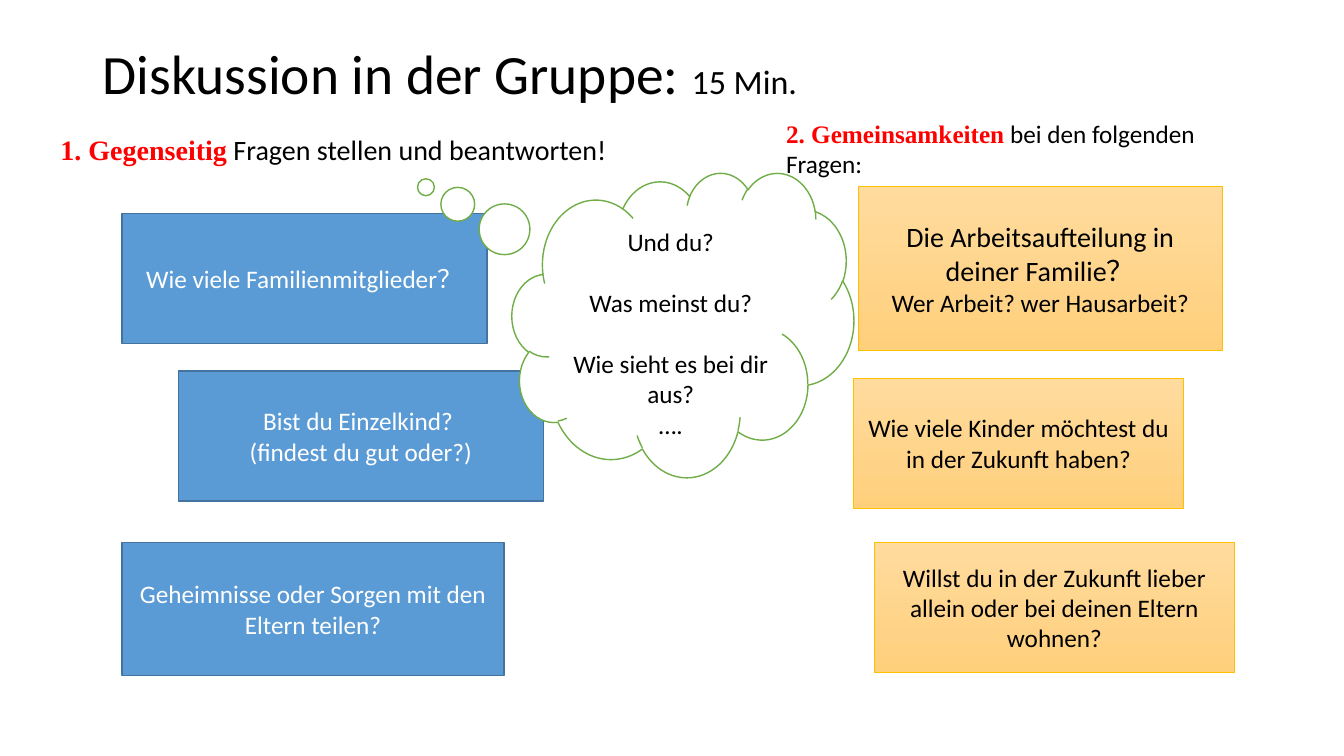
import pptx
import pptx.util
import pptx.dml.color
import pptx.enum.shapes
import pptx.enum.text

COLORS = {
    "black": "000000", "white": "FFFFFF", "red": "FF0000",
    "blue": "5B9BD5", "blue_line": "43739E", "green": "70AD47",
    "sand_top": "FFDB9E", "sand_bottom": "FFD07C", "gold": "FFC000",
}
SHAPES = pptx.enum.shapes.MSO_SHAPE
ALIGN = pptx.enum.text.PP_ALIGN
ANCHOR = pptx.enum.text.MSO_ANCHOR
AUTO_SIZE = pptx.enum.text.MSO_AUTO_SIZE


def rgb(name):
    """Return the named colour."""
    return pptx.dml.color.RGBColor.from_string(COLORS[name])


def inside(box, shares):
    """Return the part of a box given by percentages of its size."""
    left, top, width, height = box
    x, y, w, h = (share / 100 for share in shares)
    return (round(left + x * width), round(top + y * height),
            round(w * width), round(h * height))


def add_text(p, text, size=18, color="black", font="Calibri", bold=False):
    """Add a formatted run to a paragraph."""
    r = p.add_run()
    r.text = text
    r.font.name = font
    r.font.size = pptx.util.Pt(size)
    r.font.bold = bold
    r.font.color.rgb = rgb(color)


def add_lines(sp, lines, color="black", gaps=()):
    """Centre lines of text and their sizes in a shape, with gaps before some."""
    tf = sp.text_frame
    tf.word_wrap = True
    tf.vertical_anchor = ANCHOR.MIDDLE
    for i, (text, size) in enumerate(lines):
        p = tf.paragraphs[0] if i == 0 else tf.add_paragraph()
        p.alignment = ALIGN.CENTER
        if i in gaps:
            p.space_before = pptx.util.Pt(22)
        add_text(p, text, size, color)


def add_outlined(s, kind, box, line, width):
    """Add a shape with an outline and no shadow."""
    sp = s.shapes.add_shape(kind, *box)
    sp.shadow.inherit = False
    sp.line.color.rgb = rgb(line)
    sp.line.width = pptx.util.Pt(width)
    return sp


def fill_blue(sp):
    """Fill a shape with plain blue."""
    sp.fill.solid()
    sp.fill.fore_color.rgb = rgb("blue")


def fill_sand(sp):
    """Fill a shape with a gradient running downwards."""
    sp.fill.gradient()
    sp.fill.gradient_angle = 270
    for stop, name in zip(sp.fill.gradient_stops, ("sand_top", "sand_bottom")):
        stop.color.rgb = rgb(name)


def add_title(s, box):
    """Place the title and its time limit."""
    sp = s.shapes.title
    sp.left, sp.top, sp.width, sp.height = box
    tf = sp.text_frame
    tf.auto_size = AUTO_SIZE.NONE
    tf.vertical_anchor = ANCHOR.MIDDLE
    p = tf.paragraphs[0]
    p.alignment = ALIGN.LEFT
    p.line_spacing = 0.9
    add_text(p, "Diskussion in der Gruppe: ", 39.6)
    add_text(p, "15 Min.", 24.3)


def add_heading(s, box, keyword, rest, size):
    """Add a task heading with a red keyword."""
    tf = s.shapes.add_textbox(*box).text_frame
    tf.word_wrap = True
    tf.auto_size = AUTO_SIZE.SHAPE_TO_FIT_TEXT
    p = tf.paragraphs[0]
    add_text(p, keyword, size, "red", "Times New Roman", True)
    add_text(p, rest, size)


def add_questions(s, box, questions, fill, line, width, color):
    """Add a column of question cards."""
    for shares, lines in questions:
        sp = add_outlined(s, SHAPES.RECTANGLE, inside(box, shares), line, width)
        fill(sp)
        add_lines(sp, lines, color)


def add_cloud(s, box):
    """Add the thought cloud with follow-up questions."""
    sp = add_outlined(s, SHAPES.CLOUD_CALLOUT, box, "green", 1)
    sp.adjustments[0] = -0.752
    sp.adjustments[1] = -0.451
    sp.fill.solid()
    sp.fill.fore_color.rgb = rgb("white")
    sp.text_frame.margin_top = pptx.util.Inches(0.35)
    texts = ("Und du?", "Was meinst du?", "Wie sieht es bei dir aus?", "….")
    add_lines(sp, [(text, 18) for text in texts], gaps=(1, 2))


def main():
    """Build and save the slide."""
    prs = pptx.Presentation()
    prs.slide_width = pptx.util.Inches(13.33)
    prs.slide_height = pptx.util.Inches(7.5)
    s = prs.slides.add_slide(prs.slide_layouts[5])
    page = (0, 0, prs.slide_width, prs.slide_height)
    family = [
        ((0, 0, 86.6, 28.17), [("Wie viele Familienmitglieder？", 18)]),
        ((13.4, 34.06, 86.6, 28.17),
         [("Bist du Einzelkind? ", 18), ("(findest du gut oder?)", 18)]),
        ((0, 71.18, 90.67, 28.82),
         [("Geheimnisse oder Sorgen mit den Eltern teilen?", 18)]),
    ]
    future = [
        ((1.06, 0, 95.77, 33.82),
         [("Die Arbeitsaufteilung in deiner Familie？", 20),
          ("Wer Arbeit? wer Hausarbeit?", 18)]),
        ((0, 39.42, 86.51, 26.76),
         [("Wie viele Kinder möchtest du in der Zukunft haben?", 18)]),
        ((5.29, 73.24, 94.71, 26.76),
         [("Willst du in der Zukunft lieber allein oder bei deinen Eltern wohnen?", 18)]),
    ]
    add_title(s, inside(page, (6.9, 5.33, 86.25, 9.6)))
    add_questions(s, inside(page, (9.08, 28.27, 31.35, 61.07)), family,
                  fill_blue, "blue_line", 1, "white")
    add_questions(s, inside(page, (63.53, 24.67, 28.35, 64.27)), future,
                  fill_sand, "gold", 0.5, "black")
    add_heading(s, inside(page, (3.75, 16.93, 44.63, 5.87)),
                "1. Gegenseitig", " Fragen stellen und beantworten!", 20)
    add_heading(s, inside(page, (57.75, 14.93, 37.8, 5.33)),
                "2. Gemeinsamkeiten", " bei den folgenden Fragen:", 18)
    add_cloud(s, inside(page, (38.1, 22.8, 25.43, 40.27)))
    prs.save("out.pptx")


if __name__ == "__main__":
    main()
